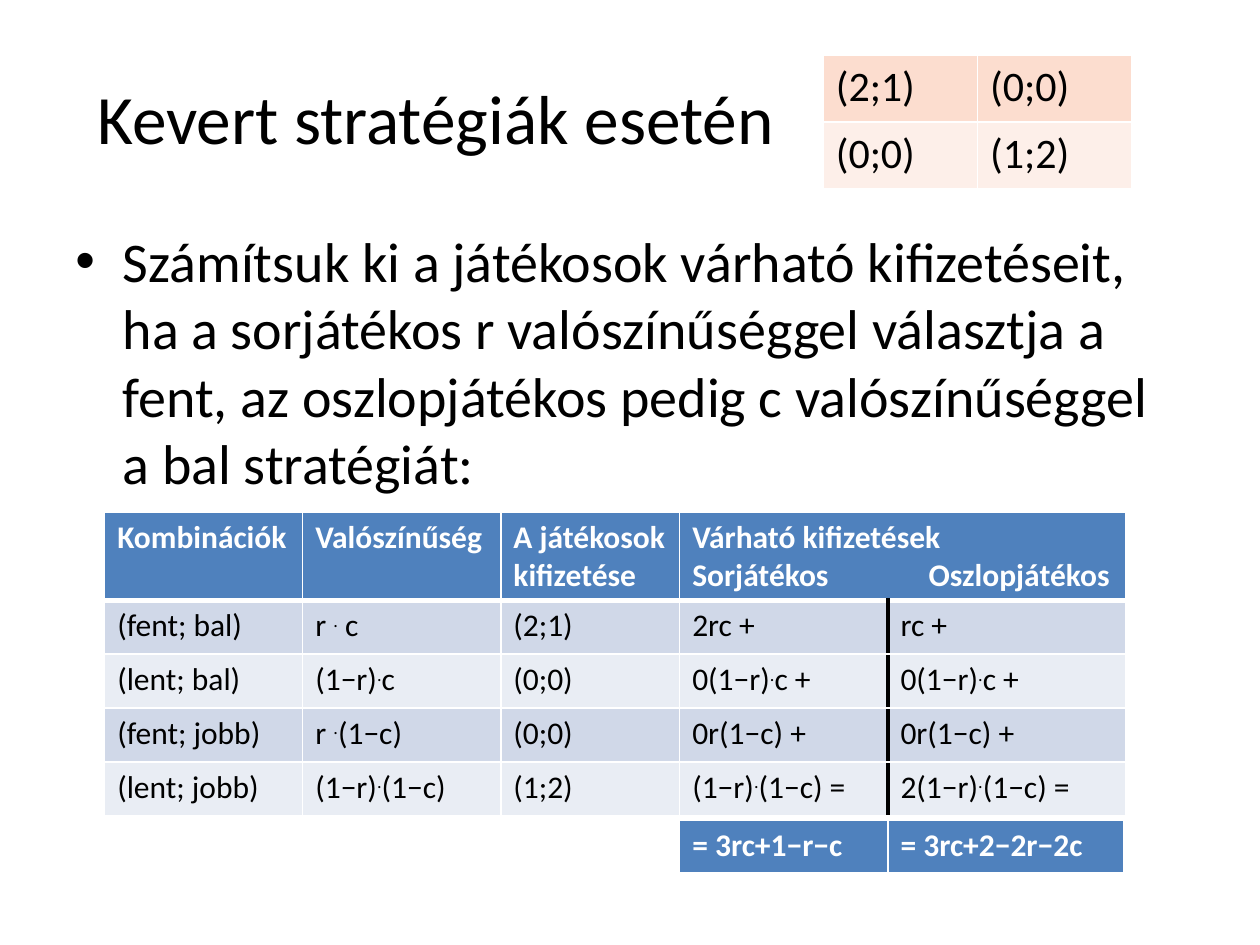
import dataclasses

import lxml.etree
import pptx
import pptx.dml.color
import pptx.enum.text
import pptx.oxml.ns
import pptx.util

Pt = pptx.util.Pt
qn = pptx.oxml.ns.qn


@dataclasses.dataclass(frozen=True)
class Theme:
    font: str = "Calibri"
    ink: str = "000000"
    white: str = "FFFFFF"
    header: str = "4F81BD"
    blue_bands: tuple = ("D0D8E8", "E9EDF4")
    orange_bands: tuple = ("FCDDCF", "FDEFE9")
    title_size: float = 39.6
    body_size: float = 32
    payoff_size: float = 24
    table_size: float = 18
    thin: float = 1
    thick: float = 3


THEME = Theme()
HEADINGS = ["Kombinációk", "Valószínűség", "A játékosok kifizetése",
            "Várható kifizetések\nSorjátékos\tOszlopjátékos", ""]
COMBINATIONS = [
    ["(fent; bal)", "r . c", "(2;1)", "2rc +", "rc +"],
    ["(lent; bal)", "(1−r).c", "(0;0)", "0(1−r).c +", "0(1−r).c +"],
    ["(fent; jobb)", "r .(1−c)", "(0;0)", "0r(1−c) +", "0r(1−c) +"],
    ["(lent; jobb)", "(1−r).(1−c)", "(1;2)", "(1−r).(1−c) =", "2(1−r).(1−c) ="],
]


def style(paragraph, size, color, bold=False):
    paragraph.font.name = THEME.font
    paragraph.font.size = Pt(size)
    paragraph.font.bold = bold
    paragraph.font.color.rgb = pptx.dml.color.RGBColor.from_string(color)


def write_product(paragraph, text):
    for index, factor in enumerate(text.split(".")):
        if index:
            dot = paragraph.add_run()
            dot.text = "."
            dot._r.get_or_add_rPr().set("baseline", "30000")
        if factor:
            paragraph.add_run().text = factor


def fill_cell(cell, text, size, color, fill, bold=False):
    cell.fill.solid()
    cell.fill.fore_color.rgb = pptx.dml.color.RGBColor.from_string(fill)
    for index, line in enumerate(text.split("\n")):
        paragraph = cell.text_frame.add_paragraph() if index else cell.text_frame.paragraphs[0]
        write_product(paragraph, line)
        style(paragraph, size, color, bold)


def border_cell(cell, **special):
    properties = cell._tc.get_or_add_tcPr()
    for position, side in enumerate("LRTB"):
        color, width = special.get(side, (THEME.white, THEME.thin))
        line = lxml.etree.Element(qn(f"a:ln{side}"), w=str(Pt(width)))
        solid = lxml.etree.SubElement(line, qn("a:solidFill"))
        lxml.etree.SubElement(solid, qn("a:srgbClr"), val=color)
        properties.insert(position, line)


def add_grid(slide, left, top, widths, heights):
    frame = slide.shapes.add_table(len(heights), len(widths), Pt(left), Pt(top),
                                   Pt(sum(widths)), Pt(sum(heights)))
    grid = frame.table
    grid.first_row = grid.horz_banding = False
    for column, width in zip(grid.columns, widths):
        column.width = Pt(width)
    for row, height in zip(grid.rows, heights):
        row.height = Pt(height)
    return grid


def add_title(slide, left, top, width, height):
    title = slide.shapes.title
    title.left, title.top, title.width, title.height = map(Pt, (left, top, width, height))
    frame = title.text_frame
    frame.text = "Kevert stratégiák esetén"
    frame.vertical_anchor = pptx.enum.text.MSO_ANCHOR.MIDDLE
    frame.paragraphs[0].alignment = pptx.enum.text.PP_ALIGN.CENTER
    style(frame.paragraphs[0], THEME.title_size, THEME.ink)


def add_task(slide, left, top, width, height):
    frame = slide.shapes.add_textbox(*map(Pt, (left, top, width, height))).text_frame
    frame.word_wrap = True
    task = frame.paragraphs[0]
    task.text = ("Számítsuk ki a játékosok várható kifizetéseit, ha a sorjátékos r "
                 "valószínűséggel választja a fent, az oszlopjátékos pedig c "
                 "valószínűséggel a bal stratégiát:")
    style(task, THEME.body_size, THEME.ink)
    task.space_before = Pt(6.4)
    properties = task._p.get_or_add_pPr()
    properties.set("marL", str(Pt(27)))
    properties.set("indent", str(Pt(-27)))
    bullet_font = lxml.etree.Element(qn("a:buFont"), typeface="Arial")
    bullet = lxml.etree.Element(qn("a:buChar"), char="•")
    properties.find(qn("a:spcBef")).addnext(bullet_font)
    bullet_font.addnext(bullet)


def add_payoffs(slide, left, top, width, height):
    grid = add_grid(slide, left, top, [width / 2] * 2, [height / 2] * 2)
    for r, payoffs in enumerate([["(2;1)", "(0;0)"], ["(0;0)", "(1;2)"]]):
        for c, payoff in enumerate(payoffs):
            fill_cell(grid.cell(r, c), payoff, THEME.payoff_size, THEME.ink,
                      THEME.orange_bands[r])
            border_cell(grid.cell(r, c))


def add_expectations(slide, left, top, widths, header_height, row_height):
    grid = add_grid(slide, left, top, widths,
                    [header_height] + [row_height] * len(COMBINATIONS))
    grid.cell(0, 3).merge(grid.cell(0, 4))
    for c, heading in enumerate(HEADINGS):
        fill_cell(grid.cell(0, c), heading, THEME.table_size, THEME.white, THEME.header, True)
        border_cell(grid.cell(0, c), B=(THEME.white, THEME.thick))
    players = grid.cell(0, 3).text_frame.paragraphs[1]._p.get_or_add_pPr()
    tabs = lxml.etree.Element(qn("a:tabLst"))
    lxml.etree.SubElement(tabs, qn("a:tab"), pos=str(Pt(135)), algn="l")
    players.insert(0, tabs)

    divider = (THEME.ink, THEME.thick)
    divided_sides = {3: {"R": divider}, 4: {"L": divider}}
    for r, combination in enumerate(COMBINATIONS):
        for c, entry in enumerate(combination):
            cell = grid.cell(r + 1, c)
            fill_cell(cell, entry, THEME.table_size, THEME.ink, THEME.blue_bands[r % 2])
            border_cell(cell, **divided_sides.get(c, {}))


def add_totals(slide, left, top, widths, height):
    grid = add_grid(slide, left, top, widths, [height])
    for c, total in enumerate(["= 3rc+1−r−c", "= 3rc+2−2r−2c"]):
        fill_cell(grid.cell(0, c), total, THEME.table_size, THEME.white, THEME.header, True)
        border_cell(grid.cell(0, c), B=(THEME.white, THEME.thick))


def main():
    presentation = pptx.Presentation()
    presentation.slide_width, presentation.slide_height = Pt(720), Pt(540)
    slide = presentation.slides.add_slide(presentation.slide_layouts[5])
    add_title(slide, 36, 21.6, 426, 90)
    add_task(slide, 36, 126, 648, 161)
    add_payoffs(slide, 470.4, 31.8, 176.4, 76)
    widths = [113.2, 113.2, 102.2, 119, 136]
    add_expectations(slide, 59.8, 292.6, widths, 50, 30.8)
    add_totals(slide, 59.8 + sum(widths[:3]), 468.7, [119, 134.6], 31)
    presentation.save("out.pptx")


if __name__ == "__main__":
    main()
